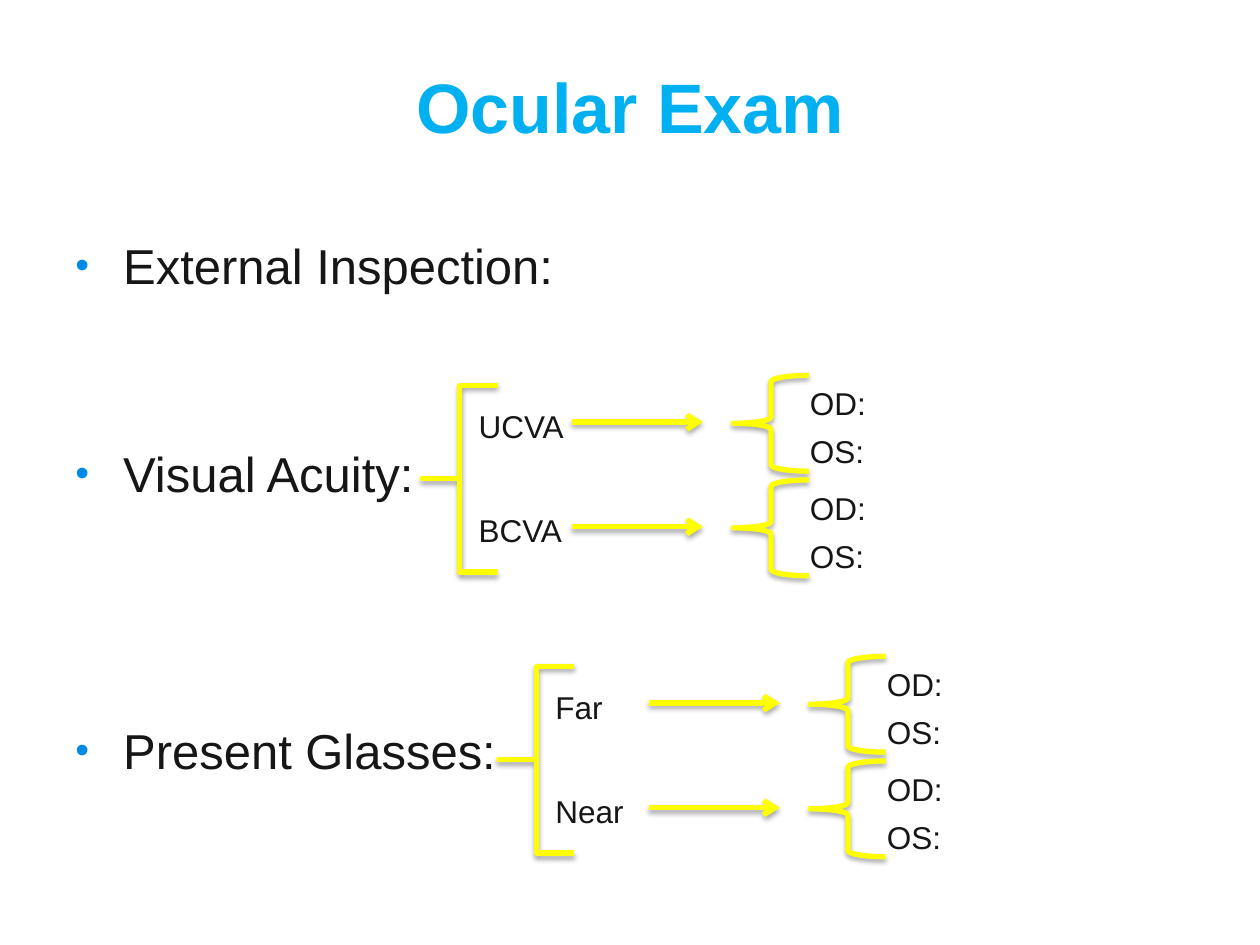
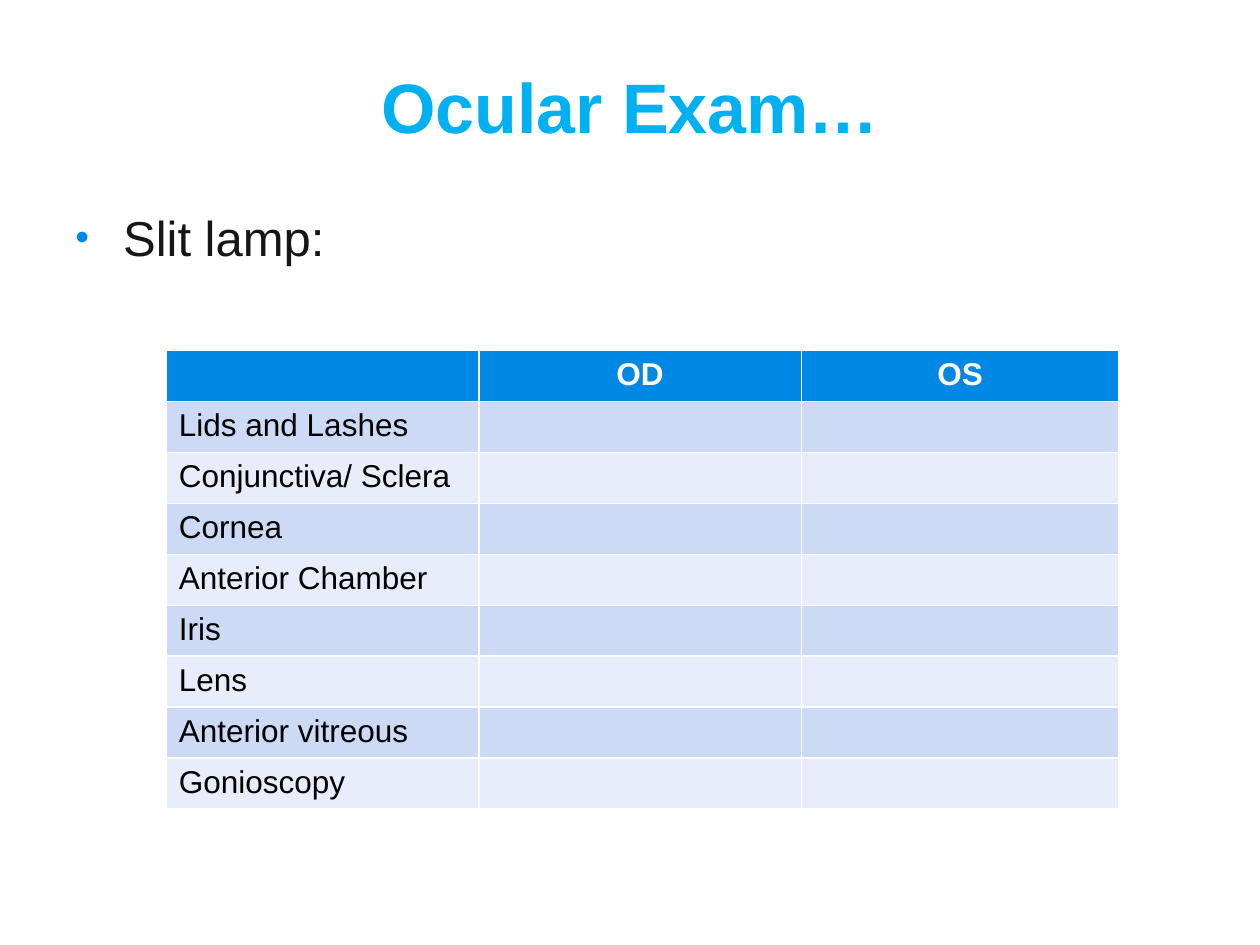
from lxml import etree
from pptx import Presentation
from pptx.dml.color import RGBColor
from pptx.enum.shapes import MSO_CONNECTOR, MSO_SHAPE
from pptx.enum.text import MSO_ANCHOR, PP_ALIGN
from pptx.oxml import parse_xml
from pptx.oxml.ns import nsdecls, qn
from pptx.util import Inches, Pt

BRACE = MSO_SHAPE.LEFT_BRACE
STRAIGHT = MSO_CONNECTOR.STRAIGHT
CENTER, LEFT = PP_ALIGN.CENTER, PP_ALIGN.LEFT
MIDDLE = MSO_ANCHOR.MIDDLE

FONT = "Arial"
COLORS = {name: RGBColor.from_string(value) for name, value in {
    "title": "00B0F0", "text": "161616", "bullet": "008AE8",
    "bracket": "FFFF00", "header": "0088E4", "band_dark": "CCDAF5",
    "band_light": "E7EDFA", "white": "FFFFFF", "black": "000000"}.items()}

SHADOW = (f'<a:effectLst {nsdecls("a")}>'
          '<a:outerShdw blurRad="39370" dist="22860" dir="5400000" rotWithShape="0">'
          '<a:srgbClr val="000000"><a:alpha val="35000"/></a:srgbClr>'
          '</a:outerShdw></a:effectLst>')

prs = Presentation()
prs.slide_width, prs.slide_height = Inches(10), Inches(7.5)
MARGIN = Inches(0.5)
CONTENT_W = prs.slide_width - 2 * MARGIN


def format_text(p, size, color, bold=False, align=LEFT):
    p.alignment = align
    for r in p.runs:
        r.font.name, r.font.size, r.font.bold = FONT, Pt(size), bold
        r.font.color.rgb = COLORS[color]


def style_bracket(shape):
    """Give a brace or arrow the thick yellow line and its soft shadow."""
    shape.line.color.rgb = COLORS["bracket"]
    shape.line.width = Pt(3)
    shape._element.spPr.append(parse_xml(SHADOW))


# Each slide: title, top of the bullets, bullets with the space before each
outlines = [
    ("Ocular Exam", 1.82, [("External Inspection:", 0), ("Visual Acuity:", 85),
                           ("Present Glasses:", 125)]),
    ("Ocular Exam…", 1.6, [("Slit lamp:", 0)]),
]
for title, top, bullets in outlines:
    s = prs.slides.add_slide(prs.slide_layouts[5])
    sp = s.shapes.title
    sp.left, sp.top, sp.width, sp.height = MARGIN, Inches(0.3), CONTENT_W, Inches(1.08)
    sp.text_frame.text = title
    sp.text_frame.vertical_anchor = MIDDLE
    format_text(sp.text_frame.paragraphs[0], 40, "title", True, CENTER)

    tf = s.shapes.add_textbox(MARGIN, Inches(top), CONTENT_W,
                              Inches(6.7 - top)).text_frame
    tf.word_wrap = True
    tf.text = "\n".join(text for text, _ in bullets)
    for p, (_, gap) in zip(tf.paragraphs, bullets):
        format_text(p, 28, "text")
        p.space_before = Pt(gap)
        pPr = p._p.get_or_add_pPr()
        pPr.set("marL", str(Inches(0.38)))
        pPr.set("indent", str(-Inches(0.38)))
        color = etree.SubElement(pPr, qn("a:buClr"))
        etree.SubElement(color, qn("a:srgbClr"), val=str(COLORS["bullet"]))
        etree.SubElement(pPr, qn("a:buSzPct"), val="80000")
        etree.SubElement(pPr, qn("a:buFont"), typeface=FONT)
        etree.SubElement(pPr, qn("a:buChar"), char="•")

exam, slit_lamp = prs.slides

# Bracket trees: two branches, each with a value for either eye
ROW_STEP, EYE_STEP = 0.83, 0.38
trees = [(3.35, 3.06, ("UCVA", "BCVA")), (3.96, 5.29, ("Far", "Near"))]
for x, y, branches in trees:
    shapes = exam.shapes.add_group_shape().shapes
    braces = [(x, y, 1.48)]
    labels = []
    for row, branch in enumerate(branches):
        row_y = y + row * ROW_STEP
        braces.append((x + 2.47, row_y - 0.08, 0.76))
        labels.append((branch, x + 0.35, row_y + 0.12))
        for i, eye in enumerate(("OD:", "OS:")):
            labels.append((eye, x + 2.98, row_y - 0.06 + i * EYE_STEP))

        arrow_y = Inches(row_y + 0.29)
        arrow = shapes.add_connector(STRAIGHT, Inches(x + 1.19), arrow_y,
                                     Inches(x + 2.23), arrow_y)
        style_bracket(arrow)
        etree.SubElement(arrow.line._get_or_add_ln(), qn("a:tailEnd"), type="arrow")

    for left, top, height in braces:
        sp = shapes.add_shape(BRACE, Inches(left), Inches(top), Inches(0.6), Inches(height))
        sp.fill.background()
        style_bracket(sp)
        if height > 1:
            sp.adjustments[0] = 0

    for text, left, top in labels:
        tf = shapes.add_textbox(Inches(left), Inches(top), Inches(1), Inches(0.4)).text_frame
        tf.word_wrap = True
        tf.text = text
        format_text(tf.paragraphs[0], 18, "text")

# Slit lamp findings
columns = [("", 2.48), ("OD", 2.56), ("OS", 2.52)]
structures = ["Lids and Lashes", "Conjunctiva/ Sclera", "Cornea", "Anterior Chamber",
              "Iris", "Lens", "Anterior vitreous", "Gonioscopy"]
n_rows = len(structures) + 1
table = slit_lamp.shapes.add_table(n_rows, len(columns), Inches(1.32), Inches(2.78),
                                   Inches(7.56), Inches(0.405 * n_rows)).table
for c, (heading, width) in enumerate(columns):
    table.columns[c].width = Inches(width)
    table.cell(0, c).text = heading
for r, structure in enumerate(structures, 1):
    table.cell(r, 0).text = structure

for r, row in enumerate(table.rows):
    fill = "header" if r == 0 else "band_dark" if r % 2 else "band_light"
    for cell in row.cells:
        cell.fill.solid()
        cell.fill.fore_color.rgb = COLORS[fill]
        p = cell.text_frame.paragraphs[0]
        if r == 0:
            format_text(p, 18, "white", True, CENTER)
        else:
            format_text(p, 18, "black")

prs.save("out.pptx")
